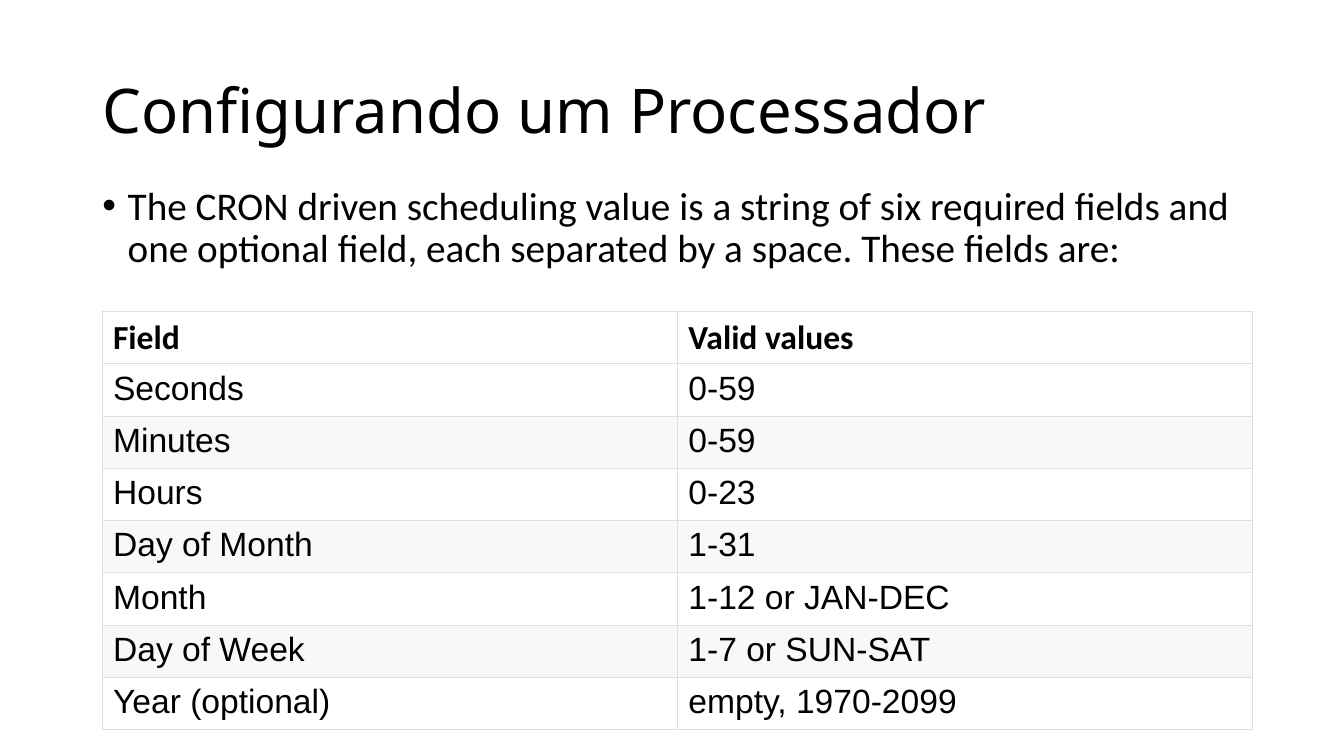
from lxml.etree import SubElement
from pptx import Presentation
from pptx.dml.color import RGBColor
from pptx.enum.text import MSO_ANCHOR
from pptx.oxml.ns import qn
from pptx.util import Cm, Pt

BLACK = RGBColor(0x00, 0x00, 0x00)
WHITE = RGBColor(0xFF, 0xFF, 0xFF)
BAND = RGBColor(0xF8, 0xF8, 0xF7)
BORDER = RGBColor(0xDE, 0xDE, 0xDE)

CRON_FIELDS = [
    ("Field", "Valid values"),
    ("Seconds", "0-59"),
    ("Minutes", "0-59"),
    ("Hours", "0-23"),
    ("Day of Month", "1-31"),
    ("Month", "1-12 or JAN-DEC"),
    ("Day of Week", "1-7 or SUN-SAT"),
    ("Year (optional)", "empty, 1970-2099"),
]


class SlideBuilder:
    title_font = "Noto Sans"
    body_font = "Calibri"
    cell_font = "Arial"

    def __init__(self, page):
        self.page = page

    def style(self, paragraph, name, size, bold=False):
        font = paragraph.font
        font.name = name
        font.size = Pt(size)
        font.bold = bold
        font.color.rgb = BLACK

    def text_box(self, text, left, top, width, height, anchor):
        box = self.page.shapes.add_textbox(Cm(left), Cm(top), Cm(width), Cm(height))
        frame = box.text_frame
        frame.word_wrap = True
        frame.vertical_anchor = anchor
        paragraph = frame.paragraphs[0]
        paragraph.text = text
        paragraph.line_spacing = 0.9
        return paragraph

    def title(self, text, left, top, width, height):
        paragraph = self.text_box(text, left, top, width, height, MSO_ANCHOR.MIDDLE)
        self.style(paragraph, self.title_font, 44)

    def bullet(self, text, left, top, width, height):
        paragraph = self.text_box(text, left, top, width, height, MSO_ANCHOR.TOP)
        indent = Cm(0.64)
        properties = paragraph._p.get_or_add_pPr()
        properties.set("marL", str(indent))
        properties.set("indent", str(-indent))
        SubElement(properties, qn("a:buFont"), typeface="Arial")
        SubElement(properties, qn("a:buChar"), char="•")
        self.style(paragraph, self.body_font, 28)

    def table(self, rows, left, top, column_width, row_height):
        columns = len(rows[0])
        table = self.page.shapes.add_table(
            len(rows), columns, Cm(left), Cm(top),
            Cm(column_width * columns), Cm(row_height * len(rows)),
        ).table
        for column in table.columns:
            column.width = Cm(column_width)
        for row_index, values in enumerate(rows):
            table.rows[row_index].height = Cm(row_height)
            for column_index, value in enumerate(values):
                self.cell(table.cell(row_index, column_index), value, row_index)

    def cell(self, cell, value, row_index):
        header = row_index == 0
        banded = row_index > 0 and row_index % 2 == 0
        cell.margin_left = cell.margin_right = Cm(0.28)
        cell.margin_top = cell.margin_bottom = Cm(0.15)
        self.borders(cell)
        cell.fill.solid()
        cell.fill.fore_color.rgb = BAND if banded else WHITE
        paragraph = cell.text_frame.paragraphs[0]
        paragraph.text = value
        self.style(paragraph, self.body_font if header else self.cell_font, 24, header)

    def borders(self, cell):
        properties = cell._tc.get_or_add_tcPr()
        for side in ("L", "R", "T", "B"):
            line = SubElement(properties, qn(f"a:ln{side}"), w=str(Pt(0.75)))
            fill = SubElement(line, qn("a:solidFill"))
            SubElement(fill, qn("a:srgbClr"), val=str(BORDER))


def main():
    deck = Presentation()
    deck.slide_width = Cm(33.87)
    deck.slide_height = Cm(19.05)
    builder = SlideBuilder(deck.slides.add_slide(deck.slide_layouts[6]))
    builder.title("Configurando um Processador", 2.33, 1.01, 29.21, 3.68)
    builder.bullet(
        "The CRON driven scheduling value is a string of six required fields and "
        "one optional field, each separated by a space. These fields are:",
        2.33, 4.57, 30.12, 8.89,
    )
    builder.table(CRON_FIELDS, 2.57, 7.85, 14.5, 1.14)
    deck.save("out.pptx")


if __name__ == "__main__":
    main()
